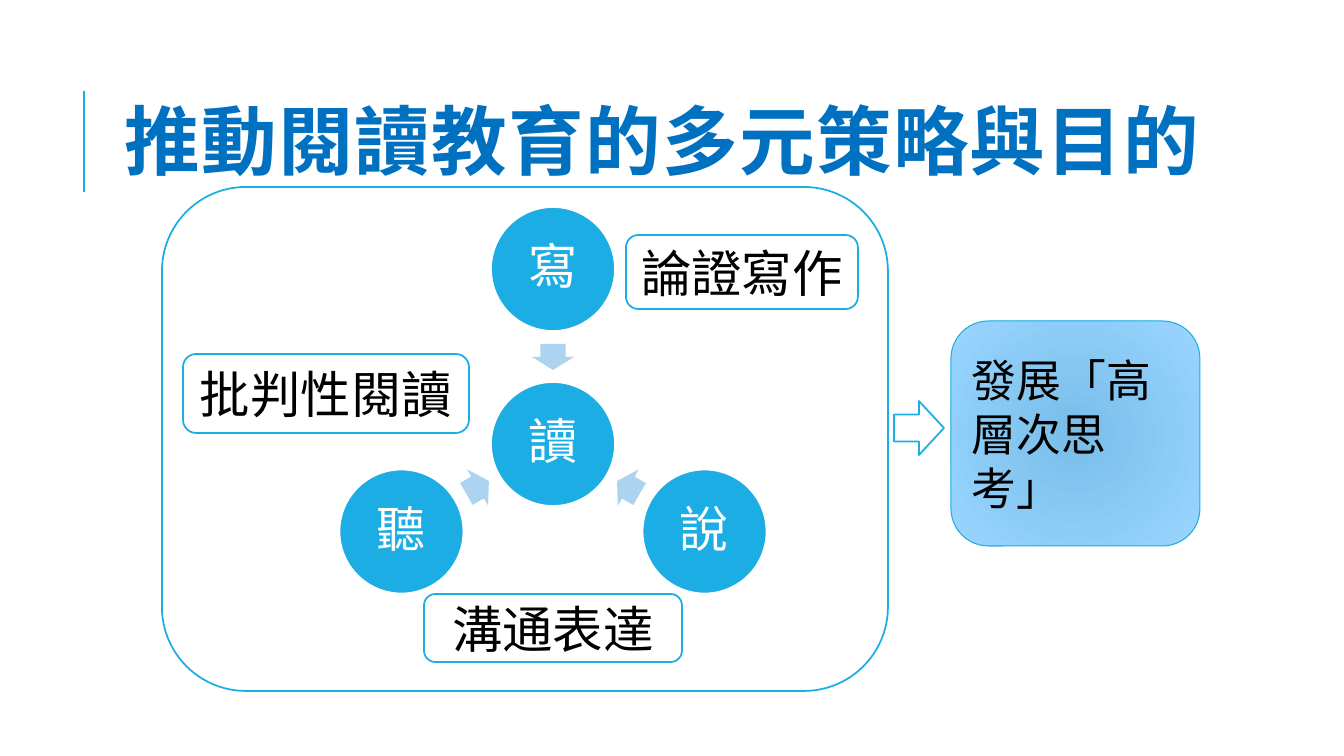
import math

from lxml import etree
from pptx import Presentation
from pptx import util as u
from pptx.dml.color import RGBColor
from pptx.enum import shapes, text
from pptx.oxml import ns

PX = 914400 / 100.8
BLUE = RGBColor(0x1C, 0xAD, 0xE4)
TITLE_BLUE = RGBColor(0x00, 0x70, 0xC0)
PALE_BLUE = RGBColor(0xAC, 0xD3, 0xEF)
GLOW_INNER = RGBColor(0x78, 0xBE, 0xE9)
GLOW_OUTER = RGBColor(0x9A, 0xD5, 0xFF)
WHITE = RGBColor(0xFF, 0xFF, 0xFF)
BLACK = RGBColor(0x00, 0x00, 0x00)
BODY_FONT = "Cabin"
CJK_FONT = "Noto Sans CJK TC"

HUB = (553, 444)
NODE_SIZE = 124
NODE_DISTANCE = 175
ARROW_DISTANCE = 87
SKILLS = [("寫", -90), ("說", 30), ("聽", 150)]
LABELS = [
    ("溝通表達", (424, 594, 258, 68)),
    ("論證寫作", (626, 235, 232, 74)),
    ("批判性閱讀", (183, 354, 286, 79)),
]


def px(length):
    return u.Emu(round(length * PX))


def add_run(paragraph, words, size, color, font=BODY_FONT):
    run = paragraph.add_run()
    run.text = words
    run.font.size = u.Pt(size)
    run.font.name = font
    run.font.color.rgb = color
    east_asian = etree.SubElement(run.font._element, ns.qn("a:ea"))
    east_asian.set("typeface", CJK_FONT)
    return run


def add_outlined(slide, preset, box, fill=None, line=None, width=1.25):
    """Add a preset shape; no fill or line is drawn where the colour is None."""
    shape = slide.shapes.add_shape(preset, *map(px, box))
    shape.shadow.inherit = False
    if fill is None:
        shape.fill.background()
    else:
        shape.fill.solid()
        shape.fill.fore_color.rgb = fill
    if line is None:
        shape.line.fill.background()
    else:
        shape.line.color.rgb = line
        shape.line.width = u.Pt(width)
    return shape


def write_centred(shape, words, size, color):
    frame = shape.text_frame
    frame.word_wrap = True
    frame.vertical_anchor = text.MSO_ANCHOR.MIDDLE
    paragraph = frame.paragraphs[0]
    paragraph.alignment = text.PP_ALIGN.CENTER
    add_run(paragraph, words, size, color)
    return paragraph


def around_hub(angle, distance):
    turn = math.radians(angle)
    return HUB[0] + distance * math.cos(turn), HUB[1] + distance * math.sin(turn)


def centred_box(centre, width, height):
    return centre[0] - width / 2, centre[1] - height / 2, width, height


def add_title(slide):
    rule = slide.shapes.add_connector(
        shapes.MSO_CONNECTOR.STRAIGHT, px(84), px(192), px(84), px(91))
    rule.line.color.rgb = BLUE
    rule.line.width = u.Pt(1.5)
    etree.SubElement(rule._element.spPr, ns.qn("a:effectLst"))

    title = slide.shapes.add_textbox(px(113), px(65), px(1099), px(165))
    frame = title.text_frame
    frame.word_wrap = False
    frame.vertical_anchor = text.MSO_ANCHOR.MIDDLE
    paragraph = frame.paragraphs[0]
    paragraph.alignment = text.PP_ALIGN.CENTER
    paragraph.line_spacing = 0.8
    run = add_run(paragraph, "推動閱讀教育的多元策略與目的", 54, TITLE_BLUE, "Calibri")
    run.font.bold = True
    run.font._element.set("spc", "100")


def add_node(slide, skill, centre):
    node = add_outlined(slide, shapes.MSO_SHAPE.OVAL,
                        centred_box(centre, NODE_SIZE, NODE_SIZE), BLUE, WHITE)
    frame = node.text_frame
    frame.margin_left = frame.margin_right = px(5)
    frame.margin_top = frame.margin_bottom = px(5)
    write_centred(node, skill, 35, WHITE).line_spacing = 0.9


def add_inward_arrow(slide, angle):
    box = centred_box(around_hub(angle, ARROW_DISTANCE), 26, 42)
    arrow = add_outlined(slide, shapes.MSO_SHAPE.RIGHT_ARROW, box, PALE_BLUE)
    arrow.adjustments[0] = 0.6
    arrow.adjustments[1] = 0.5
    arrow.rotation = angle + 180


def add_label(slide, words, box):
    label = add_outlined(slide, shapes.MSO_SHAPE.ROUNDED_RECTANGLE, box, WHITE, BLUE)
    write_centred(label, words, 36, BLACK)


def fill_radial(shape, inner, outer):
    shape.fill.gradient()
    for stop, color, position in zip(shape.fill.gradient_stops, (inner, outer), (0, 1)):
        stop.color.rgb = color
        stop.position = position
    gradient = shape._element.spPr.find(ns.qn("a:gradFill"))
    gradient.remove(gradient.find(ns.qn("a:lin")))
    circle = etree.SubElement(gradient, ns.qn("a:path"), path="circle")
    etree.SubElement(circle, ns.qn("a:fillToRect"),
                     {side: "100000" for side in "ltrb"})


def add_goal(slide):
    goal = add_outlined(slide, shapes.MSO_SHAPE.ROUNDED_RECTANGLE,
                        (951, 321, 249, 225), line=BLUE, width=0.75)
    fill_radial(goal, GLOW_INNER, GLOW_OUTER)
    frame = goal.text_frame
    frame.word_wrap = True
    frame.vertical_anchor = text.MSO_ANCHOR.MIDDLE
    paragraph = frame.paragraphs[0]
    paragraph.alignment = text.PP_ALIGN.LEFT
    for words, font in [("發展", BODY_FONT), ("「", CJK_FONT),
                        ("高層次思考", BODY_FONT), ("」", CJK_FONT)]:
        add_run(paragraph, words, 32, BLACK, font)


def main():
    deck = Presentation()
    deck.slide_width, deck.slide_height = px(1344), px(756)
    slide = deck.slides.add_slide(deck.slide_layouts[6])

    add_title(slide)
    add_node(slide, "讀", HUB)
    for skill, angle in SKILLS:
        add_inward_arrow(slide, angle)
        add_node(slide, skill, around_hub(angle, NODE_DISTANCE))
    for words, box in LABELS:
        add_label(slide, words, box)
    add_goal(slide)
    add_outlined(slide, shapes.MSO_SHAPE.RIGHT_ARROW, (894, 401, 50, 54), WHITE, BLUE)
    add_outlined(slide, shapes.MSO_SHAPE.ROUNDED_RECTANGLE, (162, 187, 726, 504), line=BLUE)

    deck.save("out.pptx")


if __name__ == "__main__":
    main()
